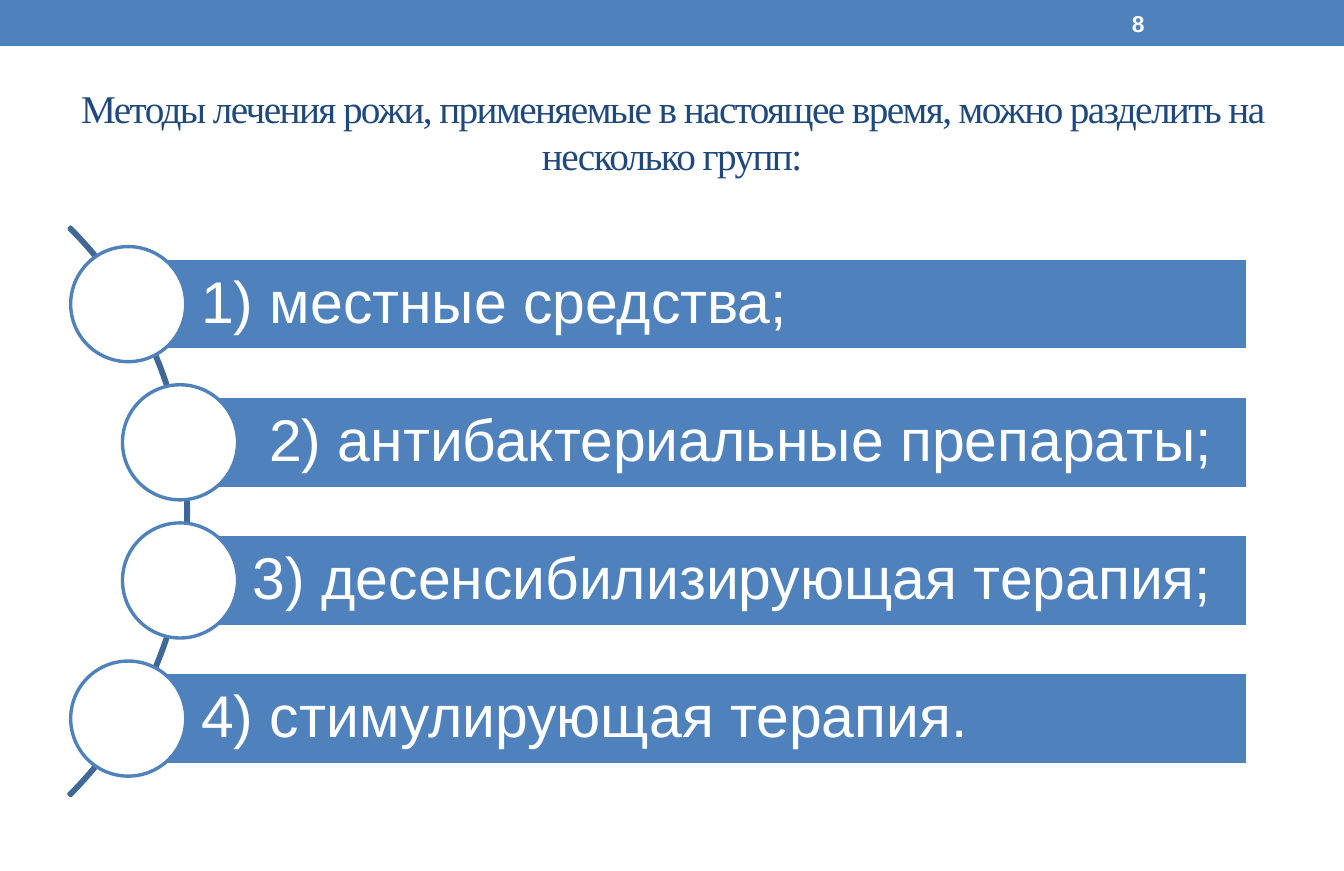
from collections import namedtuple
from math import sqrt

from pptx import Presentation
from pptx.dml.color import RGBColor
from pptx.enum.shapes import MSO_SHAPE
from pptx.enum.text import MSO_ANCHOR, MSO_AUTO_SIZE, PP_ALIGN
from pptx.util import Inches, Pt

RECTANGLE, OVAL, ARC = MSO_SHAPE.RECTANGLE, MSO_SHAPE.OVAL, MSO_SHAPE.BLOCK_ARC
MIDDLE = MSO_ANCHOR.MIDDLE
LEFT, CENTER = PP_ALIGN.LEFT, PP_ALIGN.CENTER
NO_AUTOFIT = MSO_AUTO_SIZE.NONE
TITLE_ONLY = 5

COLORS = {"blue": "4F81BD", "arc": "3F6797", "title": "1F497D", "white": "FFFFFF"}
LINE_WIDTH = 2.08
Box = namedtuple("Box", "left top width height")

SLIDE = Box(0, 0, 11.42, 7.4)
HEADER = Box(0, 0, SLIDE.width, 0.39)
NUMBER = Box(9.52, 0.02, 1.33, 0.36)
TITLE = Box(0.57, 0.58, 10.28, 1.07)
METHODS = Box(0.6, 1.93, 10, 4.83)

TITLE_TEXT = ("Методы лечения рожи, применяемые в настоящее время, "
              "можно разделить на несколько групп:")
METHOD_TEXTS = [
    "1) местные средства;",
    " 2) антибактериальные препараты;",
    "3) десенсибилизирующая терапия;",
    "4) стимулирующая терапия.",
]


def rgb(name):
    return RGBColor.from_string(COLORS[name])


def inches(box):
    return [Inches(length) for length in box]


def add_shape(slide, kind, box, fill=None, line=None):
    shape = slide.shapes.add_shape(kind, *inches(box))
    shape.shadow.inherit = False
    if fill:
        shape.fill.solid()
        shape.fill.fore_color.rgb = rgb(fill)
    else:
        shape.fill.background()
    if line:
        shape.line.color.rgb = rgb(line)
        shape.line.width = Pt(LINE_WIDTH)
    else:
        shape.line.fill.background()
    return shape


def write(shape, text, size, color, font="Arial", align=LEFT, bold=False):
    frame = shape.text_frame
    frame.word_wrap = True
    frame.auto_size = NO_AUTOFIT
    frame.vertical_anchor = MIDDLE
    para = frame.paragraphs[0]
    para.alignment = align
    span = para.add_run()
    span.text = text
    span.font.name = font
    span.font.size = Pt(size)
    span.font.bold = bold
    span.font.color.rgb = rgb(color)
    return para


def add_header(slide, box, number_box, number):
    add_shape(slide, RECTANGLE, box, "blue")
    label = slide.shapes.add_textbox(*inches(number_box))
    write(label, number, 14, "white", bold=True)


def add_title(slide, box, text):
    title = slide.shapes.title
    title.left, title.top, title.width, title.height = inches(box)
    para = write(title, text, 24, "title", "Times New Roman", CENTER)
    para.runs[0].font._element.set("spc", "-100")


def add_arc(slide, box):
    """Quarter circle whose chord is the left edge of the box."""
    radius = box.height / sqrt(2)
    center_x = box.left - box.height / 2
    center_y = box.top + box.height / 2
    circle = Box(center_x - radius, center_y - radius, 2 * radius, 2 * radius)
    arc = add_shape(slide, ARC, circle, line="arc")
    for index, value in enumerate((189, 27, 0.003)):
        arc.adjustments[index] = value


def add_method(slide, box, text):
    """Bar filling the box, with a circle centred on its left edge."""
    bar = add_shape(slide, RECTANGLE, box, "blue", "white")
    para = write(bar, text, 36, "white")
    para.line_spacing = 0.9
    frame = bar.text_frame
    frame.margin_left = Inches(0.62)
    frame.margin_right = frame.margin_top = frame.margin_bottom = Inches(0.1)

    diameter = 1.25 * box.height
    circle = Box(box.left - diameter / 2, box.top + (box.height - diameter) / 2,
                 diameter, diameter)
    add_shape(slide, OVAL, circle, "white", "blue")


def add_methods(slide, box, texts):
    add_arc(slide, box)
    bar_height = 0.162 * box.height
    pitch = 1.5 * bar_height
    first_top = box.top + (box.height - bar_height - pitch * (len(texts) - 1)) / 2
    for row, text in enumerate(texts):
        indent = 0.49 if row in (0, len(texts) - 1) else 0.93
        bar = Box(box.left + indent, first_top + row * pitch,
                  box.width - indent, bar_height)
        add_method(slide, bar, text)


def main():
    deck = Presentation()
    deck.slide_width, deck.slide_height = Inches(SLIDE.width), Inches(SLIDE.height)
    slide = deck.slides.add_slide(deck.slide_layouts[TITLE_ONLY])
    add_header(slide, HEADER, NUMBER, "8")
    add_title(slide, TITLE, TITLE_TEXT)
    add_methods(slide, METHODS, METHOD_TEXTS)
    deck.save("out.pptx")


if __name__ == "__main__":
    main()
